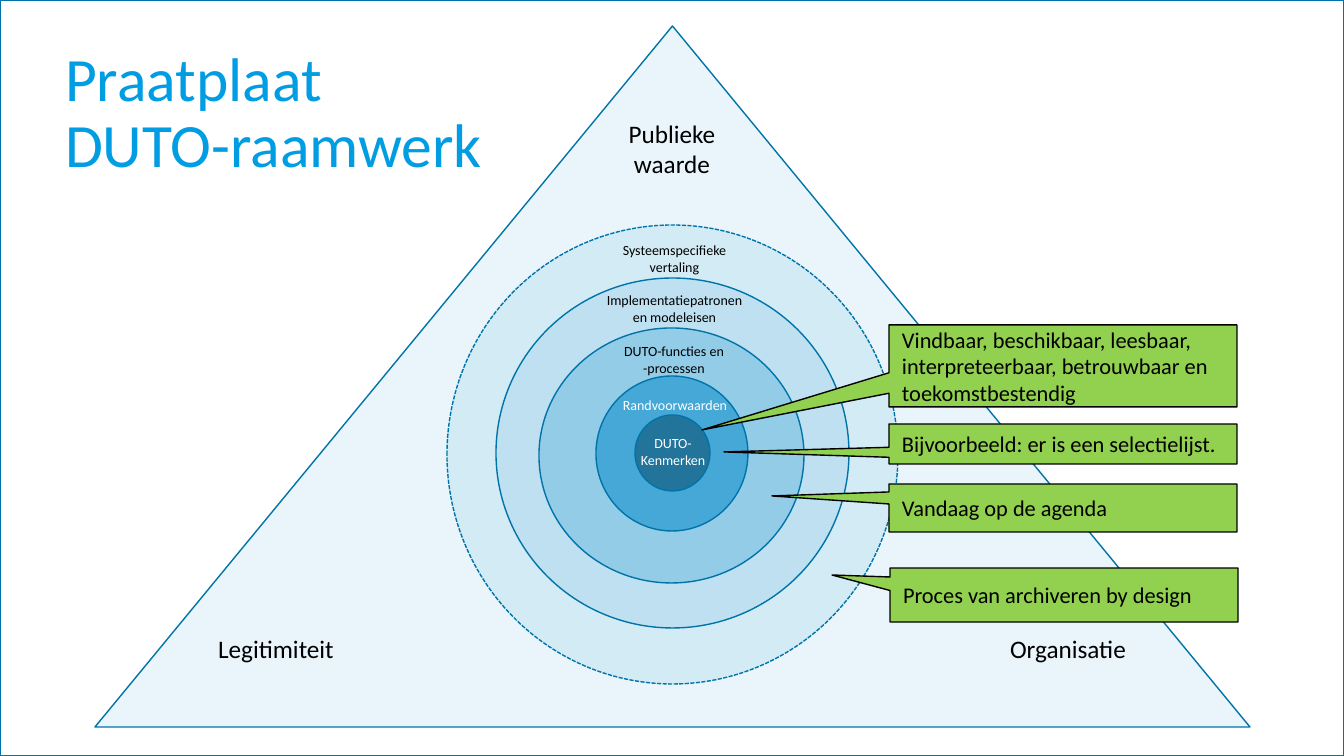
import pptx
import pptx.dml.color
import pptx.enum.dml
import pptx.enum.shapes
import pptx.enum.text
import pptx.util

# Content, with lengths in px
SLIDE_SIZE = (1344, 756)
EMU_PER_PX = 914400 / 100.8
FONT = "Calibri"
BLUE, BLACK, WHITE, GREEN = "0074A8", "000000", "FFFFFF", "92D050"

TITLE_LINES = ["Praatplaat", "DUTO-raamwerk"]
TITLE_BOX = (55, 51, 1159, 127)
FRAME_BOX = (0, 0, *SLIDE_SIZE)
TRIANGLE_BOX = (95, 26, 1155, 701)

# Rings from outside to inside: box, fill
RINGS = [
    ((447, 225, 451, 459), "D3EBF5"),
    ((496, 278, 353, 350), "BEE0F1"),
    ((539, 328, 265, 255), "92CCE7"),
    ((596, 376, 152, 155), "45A8D6"),
    ((635, 415, 75, 76), "22749A"),
]

# Labels: paragraphs, box, size, colour
LABELS = [
    (["Publieke waarde"], (596, 113, 152, 72), 18, BLACK),
    (["Legitimiteit"], (200, 628, 152, 40), 18, BLACK),
    (["Organisatie"], (992, 628, 152, 40), 18, BLACK),
    (["Systeemspecifieke vertaling"], (592, 237, 165, 44), 10, BLACK),
    (["Implementatiepatronen en modeleisen"], (592, 287, 165, 44), 10, BLACK),
    (["DUTO-functies en", "-processen"], (598, 338, 152, 44), 10, BLACK),
    (["Randvoorwaarden"], (605, 392, 140, 27), 10, WHITE),
    (["DUTO-Kenmerken"], (624, 430, 98, 44), 10, WHITE),
]

# Callouts: text, box, point of the wedge
CALLOUTS = [
    ("Vindbaar, beschikbaar, leesbaar, interpreteerbaar, betrouwbaar en toekomstbestendig",
     (889, 325, 348, 82), (702, 430)),
    ("Bijvoorbeeld: er is een selectielijst.", (889, 424, 348, 40), (724, 452)),
    ("Vandaag op de agenda", (889, 484, 348, 48), (772, 496)),
    ("Proces van archiveren by design", (890, 568, 348, 54), (832, 575)),
]

KINDS = pptx.enum.shapes.MSO_SHAPE
ALIGN = pptx.enum.text.PP_ALIGN
ANCHOR = pptx.enum.text.MSO_ANCHOR
AUTO_SIZE = pptx.enum.text.MSO_AUTO_SIZE


def px(length):
    return pptx.util.Emu(round(length * EMU_PER_PX))


def emu_box(box):
    return [px(length) for length in box]


def color(value):
    return pptx.dml.color.RGBColor.from_string(value)


def add_outlined(kind, box, fill, line=BLUE):
    shape = slide.shapes.add_shape(kind, *emu_box(box))
    shape.shadow.inherit = False
    shape.fill.solid()
    shape.fill.fore_color.rgb = color(fill)
    shape.line.color.rgb = color(line)
    shape.line.width = pptx.util.Pt(1)
    return shape


def add_run(paragraph, text, size, value):
    run = paragraph.add_run()
    run.text = text
    run.font.name = FONT
    run.font.size = pptx.util.Pt(size)
    run.font.color.rgb = color(value)


presentation = pptx.Presentation()
presentation.slide_width, presentation.slide_height = emu_box(SLIDE_SIZE)
slide = presentation.slides.add_slide(presentation.slide_layouts[5])

# Frame, triangle and rings
add_outlined(KINDS.RECTANGLE, FRAME_BOX, WHITE)
add_outlined(KINDS.ISOSCELES_TRIANGLE, TRIANGLE_BOX, "E9F5FA")
rings = [add_outlined(KINDS.FLOWCHART_CONNECTOR, box, fill) for box, fill in RINGS]
rings[0].line.dash_style = pptx.enum.dml.MSO_LINE.SQUARE_DOT

# Labels
for lines, box, size, value in LABELS:
    frame = slide.shapes.add_textbox(*emu_box(box)).text_frame
    frame.word_wrap = True
    frame.auto_size = AUTO_SIZE.SHAPE_TO_FIT_TEXT
    for index, line in enumerate(lines):
        paragraph = frame.add_paragraph() if index else frame.paragraphs[0]
        paragraph.alignment = ALIGN.CENTER
        add_run(paragraph, line, size, value)

# Callouts: the wedge point is a share of the box size, from its centre
for text, box, (tip_x, tip_y) in CALLOUTS:
    left, top, width, height = box
    callout = add_outlined(KINDS.RECTANGULAR_CALLOUT, box, GREEN, BLACK)
    callout.adjustments[0] = (tip_x - left) / width - 0.5
    callout.adjustments[1] = (tip_y - top) / height - 0.5
    frame = callout.text_frame
    frame.word_wrap = True
    frame.vertical_anchor = ANCHOR.MIDDLE
    frame.margin_left = frame.margin_right = px(13)
    frame.margin_top = frame.margin_bottom = px(7)
    frame.paragraphs[0].alignment = ALIGN.LEFT
    add_run(frame.paragraphs[0], text, 16, BLACK)

# Title, brought in front of the frame
title = slide.shapes.title
slide.shapes._spTree.append(title._element)
title.left, title.top, title.width, title.height = emu_box(TITLE_BOX)
frame = title.text_frame
frame.word_wrap = True
frame.auto_size = AUTO_SIZE.NONE
frame.vertical_anchor = ANCHOR.MIDDLE
paragraph = frame.paragraphs[0]
paragraph.alignment = ALIGN.LEFT
paragraph.line_spacing = 0.9
for index, line in enumerate(TITLE_LINES):
    if index:
        paragraph.add_line_break()
    add_run(paragraph, line, 44, "009DE3")

presentation.save("out.pptx")
